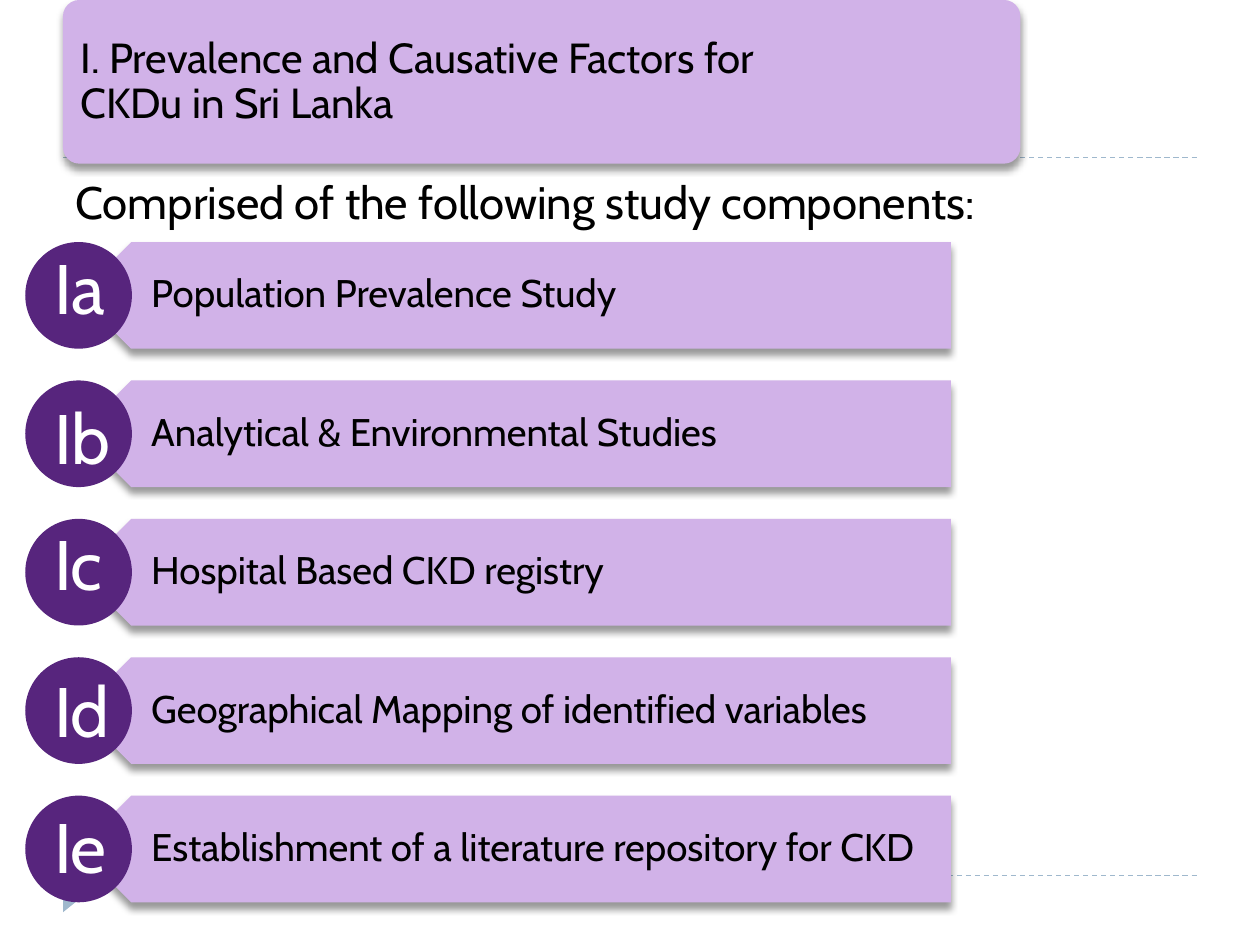
"""Build the slide on the study components of CKDu prevalence in Sri Lanka."""
from dataclasses import dataclass

from lxml import etree
from pptx import Presentation
from pptx.dml.color import RGBColor
from pptx.enum.dml import MSO_LINE
from pptx.enum.shapes import MSO_CONNECTOR, MSO_SHAPE
from pptx.enum.text import MSO_ANCHOR, MSO_AUTO_SIZE, PP_ALIGN
from pptx.oxml import parse_xml
from pptx.oxml.ns import qn
from pptx.util import Cm, Pt

STRAIGHT = MSO_CONNECTOR.STRAIGHT
DASH = MSO_LINE.DASH
TRIANGLE = MSO_SHAPE.ISOSCELES_TRIANGLE
ROUNDED = MSO_SHAPE.ROUNDED_RECTANGLE
ARROW_BAR = MSO_SHAPE.PENTAGON
OVAL = MSO_SHAPE.OVAL
TOP = MSO_ANCHOR.TOP
MIDDLE = MSO_ANCHOR.MIDDLE
LEFT = PP_ALIGN.LEFT
NO_FIT = MSO_AUTO_SIZE.NONE


@dataclass(frozen=True)
class Theme:
    font: str = "Cabin"
    text: RGBColor = RGBColor(0x00, 0x00, 0x00)
    light: RGBColor = RGBColor(0xFF, 0xFF, 0xFF)
    panel: RGBColor = RGBColor(0xD1, 0xB2, 0xE8)
    badge: RGBColor = RGBColor(0x57, 0x25, 0x7D)
    rule: RGBColor = RGBColor(0x9F, 0xB8, 0xCD)
    title_size: Pt = Pt(24)
    intro_size: Pt = Pt(26)
    study_size: Pt = Pt(22)
    code_size: Pt = Pt(40)


theme = Theme()
SHADOW = (
    '<a:outerShdw xmlns:a="http://schemas.openxmlformats.org/drawingml/2006/main"'
    ' blurRad="50800" dist="43000" dir="5400000" rotWithShape="0">'
    '<a:srgbClr val="000000"><a:alpha val="40000"/></a:srgbClr></a:outerShdw>'
)


def add_solid(kind, left, top, width, height, color, raised=False):
    solid = slide.shapes.add_shape(kind, Cm(left), Cm(top), Cm(width), Cm(height))
    solid.fill.solid()
    solid.fill.fore_color.rgb = color
    solid.line.fill.background()
    solid.shadow.inherit = False
    if raised:
        solid._element.spPr.find(qn("a:effectLst")).append(parse_xml(SHADOW))
    return solid


def write(box, text, size, color, anchor=TOP, spacing=1.0, wrap=True):
    frame = box.text_frame
    frame.text = text
    frame.auto_size = NO_FIT
    frame.word_wrap = wrap
    frame.vertical_anchor = anchor
    paragraph = frame.paragraphs[0]
    paragraph.alignment = LEFT
    paragraph.line_spacing = spacing
    paragraph.font.name = theme.font
    paragraph.font.size = size
    paragraph.font.color.rgb = color
    return frame


prs = Presentation()
prs.slide_width, prs.slide_height = Cm(25.4), Cm(19.05)
slide = prs.slides.add_slide(prs.slide_layouts[5])
shapes = slide.shapes

for rule_top in (17.65, 3.18):
    rule = shapes.add_connector(
        STRAIGHT, Cm(1.27), Cm(rule_top), Cm(24.13), Cm(rule_top))
    rule.line.color.rgb = theme.rule
    rule.line.width = Pt(0.75)
    rule.line.dash_style = DASH
    etree.SubElement(rule._element.spPr, qn("a:effectLst"))

page_marker = add_solid(TRIANGLE, 1.17, 17.96, 0.53, 0.33, theme.rule)
page_marker.rotation = 90

intro = shapes.add_textbox(Cm(1.27), Cm(3.38), Cm(22.86), Cm(1.4))
write(intro, "Comprised of the following study components:",
      theme.intro_size, theme.text)

banner = add_solid(ROUNDED, 1.27, 0, 19.3, 3.3, theme.panel, raised=True)
banner.adjustments[0] = 0.1

title = shapes.title
title.left, title.top, title.width, title.height = Cm(1.37), Cm(0.1), Cm(15.47), Cm(3.12)
write(title, "I. Prevalence and Causative Factors for CKDu in Sri Lanka",
      theme.title_size, theme.text, MIDDLE, 0.9)
banner._element.addnext(title._element)

studies = [
    ("Ia", 4.8, "Population Prevalence Study"),
    ("Ib", 7.82, "Analytical & Environmental Studies"),
    ("Ic", 10.36, "Hospital Based CKD registry"),
    ("Id", 13.34, "Geographical Mapping of identified variables"),
    ("Ie", 16.08, "Establishment of a literature repository for CKD"),
]
first_top, pitch, bar_height = 4.88, 2.79, 2.15

for row, (code, code_top, study) in enumerate(studies):
    top = first_top + row * pitch
    bar = add_solid(ARROW_BAR, 1.57, top, 17.6, bar_height, theme.panel, raised=True)
    bar.rotation = 180
    study_box = shapes.add_textbox(Cm(2.11), Cm(top), Cm(17.07), Cm(bar_height))
    study_frame = write(study_box, study, theme.study_size, theme.text, MIDDLE, 0.9)
    study_frame.margin_left, study_frame.margin_right = Cm(0.94), Cm(0.43)
    add_solid(OVAL, 0.51, top, bar_height, bar_height, theme.badge)
    code_box = shapes.add_textbox(Cm(0.84), Cm(code_top), Cm(1.7), Cm(1.96))
    write(code_box, code, theme.code_size, theme.light, wrap=False)

prs.save("out.pptx")
